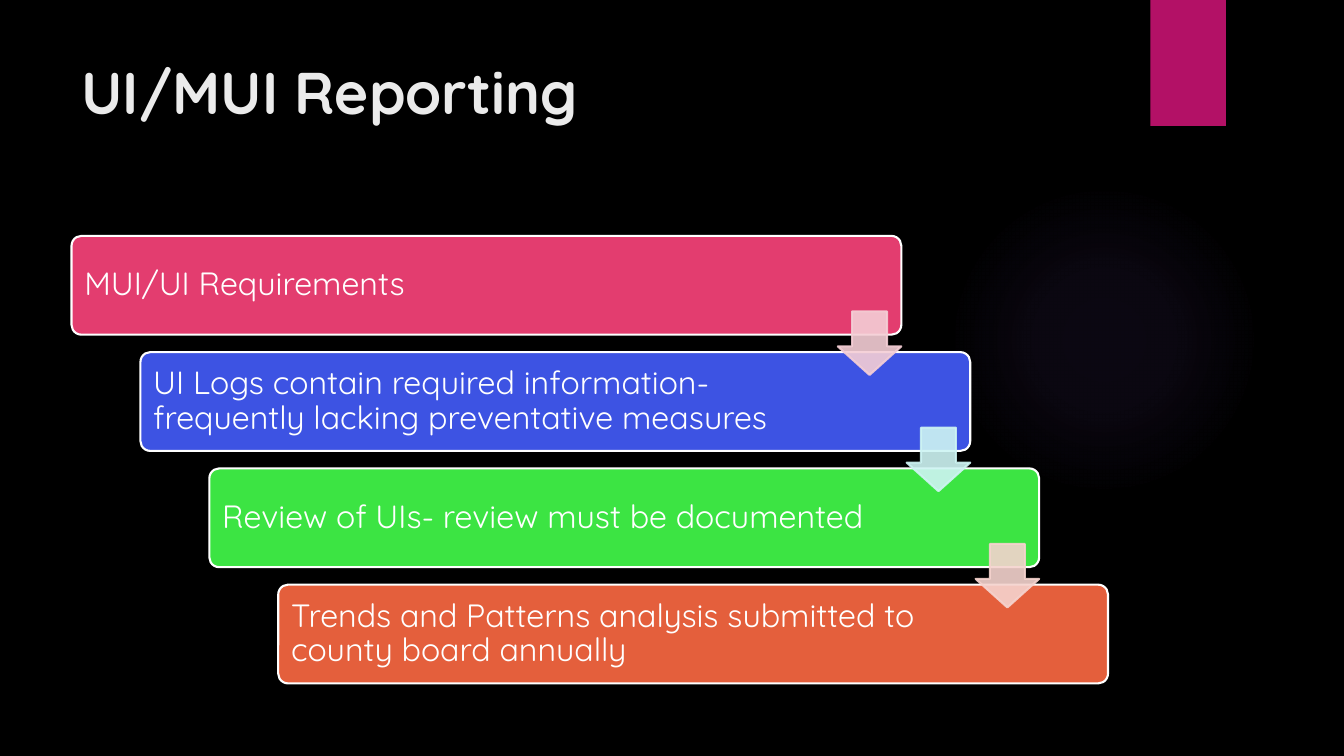
"""Build the UI/MUI Reporting slide with its staircase of steps."""
from lxml import etree
from pptx import Presentation
from pptx.dml import color
from pptx.enum import shapes, text
from pptx.oxml import ns
from pptx.util import Inches, Pt

FONT = "Quicksand"
STEPS = [
    ("MUI/UI Requirements", "E33D6F", "F4CED5"),
    ("UI Logs contain required information- frequently lacking preventative measures",
     "3D53E3", "CEF4F3"),
    ("Review of UIs- review must be documented", "3CE443", "F5D3CE"),
    ("Trends and Patterns analysis submitted to county board annually", "E45F3C", None),
]
FIRST_LEFT, LAST_LEFT = 0.71, 2.76
FIRST_TOP, LAST_TOP = 2.34, 5.8
STEP_WIDTH, STEP_HEIGHT = 8.23, 0.98
ARROW_SIZE = 0.63


def rgb(value):
    """Turn a hex string into a colour."""
    return color.RGBColor.from_string(value)


def set_alpha(color_element, percent):
    """Give a colour element an opacity."""
    alpha = etree.SubElement(color_element, ns.qn("a:alpha"))
    alpha.set("val", str(percent * 1000))


def add_block(slide, kind, left, top, width, height, fill, line=None):
    """Add a flat preset shape with an optional outline."""
    shape = slide.shapes.add_shape(
        kind, Inches(left), Inches(top), Inches(width), Inches(height))
    shape.shadow.inherit = False
    shape.fill.solid()
    shape.fill.fore_color.rgb = rgb(fill)
    if line:
        shape.line.color.rgb = rgb(line)
        shape.line.width = Pt(1.5)
    else:
        shape.line.fill.background()
    return shape


def write_text(shape, words, size, hex_color="FFFFFF", bold=False,
               anchor=text.MSO_ANCHOR.MIDDLE, spacing=1.0,
               insets=(0.1, 0.05, 0.1, 0.05)):
    """Write one left-aligned paragraph into a shape."""
    frame = shape.text_frame
    frame.word_wrap = True
    frame.vertical_anchor = anchor
    (frame.margin_left, frame.margin_top,
     frame.margin_right, frame.margin_bottom) = map(Inches, insets)
    paragraph = frame.paragraphs[0]
    paragraph.text = words
    paragraph.alignment = text.PP_ALIGN.LEFT
    paragraph.line_spacing = spacing
    font = paragraph.font
    font.name, font.size, font.bold = FONT, Pt(size), bold
    font.color.rgb = rgb(hex_color)


def add_glow(slide, left, top, size, hex_color):
    """Add a faint circle that fades out from its centre."""
    glow = add_block(slide, shapes.MSO_SHAPE.OVAL, left, top, size, size, hex_color)
    properties = glow.fill._xPr
    solid = properties.find(ns.qn("a:solidFill"))
    gradient = etree.Element(ns.qn("a:gradFill"), rotWithShape="1")
    stops = etree.SubElement(gradient, ns.qn("a:gsLst"))
    for position, opacity in ((0, 7), (36, 6), (69, 0)):
        stop = etree.SubElement(stops, ns.qn("a:gs"), pos=str(position * 1000))
        set_alpha(etree.SubElement(stop, ns.qn("a:srgbClr"), val=hex_color), opacity)
    circle = etree.SubElement(gradient, ns.qn("a:path"), path="circle")
    etree.SubElement(circle, ns.qn("a:fillToRect"),
                     {side: "50000" for side in "ltrb"})
    properties.replace(solid, gradient)


def add_step(slide, left, top, words, fill):
    """Add one rounded step with its label."""
    step = add_block(slide, shapes.MSO_SHAPE.ROUNDED_RECTANGLE,
                     left, top, STEP_WIDTH, STEP_HEIGHT, fill, "FFFFFF")
    step.adjustments[0] = 0.1
    write_text(step, words, 23, spacing=0.9, insets=(0.1, 0.1, 1.42, 0.1))


def add_step_arrow(slide, left, top, hex_color):
    """Add a translucent arrow that leads down to the next step."""
    arrow = add_block(slide, shapes.MSO_SHAPE.DOWN_ARROW,
                      left, top, ARROW_SIZE, ARROW_SIZE, hex_color, hex_color)
    arrow.adjustments[0] = 0.55
    arrow.adjustments[1] = 0.45
    for color_element in arrow._element.spPr.iter(ns.qn("a:srgbClr")):
        set_alpha(color_element, 90)


def main():
    """Build and save the slide."""
    presentation = Presentation()
    presentation.slide_width = Inches(13.33)
    presentation.slide_height = Inches(7.5)
    slide = presentation.slides.add_slide(presentation.slide_layouts[6])
    slide.background.fill.solid()
    slide.background.fill.fore_color.rgb = rgb("000000")

    add_glow(slide, 9.41, 1.83, 3.08, "9B6BF2")
    add_block(slide, shapes.MSO_SHAPE.RECTANGLE, 11.41, 0, 0.75, 1.25, "B31166")
    title = slide.shapes.add_textbox(
        Inches(0.71), Inches(0.5), Inches(10.29), Inches(1.53))
    write_text(title, "UI/MUI Reporting", 42, "EBEBEB", bold=True,
               anchor=text.MSO_ANCHOR.TOP)

    gaps = len(STEPS) - 1
    corners = [(FIRST_LEFT + (LAST_LEFT - FIRST_LEFT) * index / gaps,
                FIRST_TOP + (LAST_TOP - FIRST_TOP) * index / gaps)
               for index in range(len(STEPS))]
    for (left, top), (words, fill, _) in zip(corners, STEPS):
        add_step(slide, left, top, words, fill)
    for (left, top), (_, _, arrow_color) in zip(corners, STEPS):
        if arrow_color:
            add_step_arrow(slide, left + STEP_WIDTH - ARROW_SIZE, top + 0.75, arrow_color)

    presentation.save("out.pptx")


if __name__ == "__main__":
    main()
